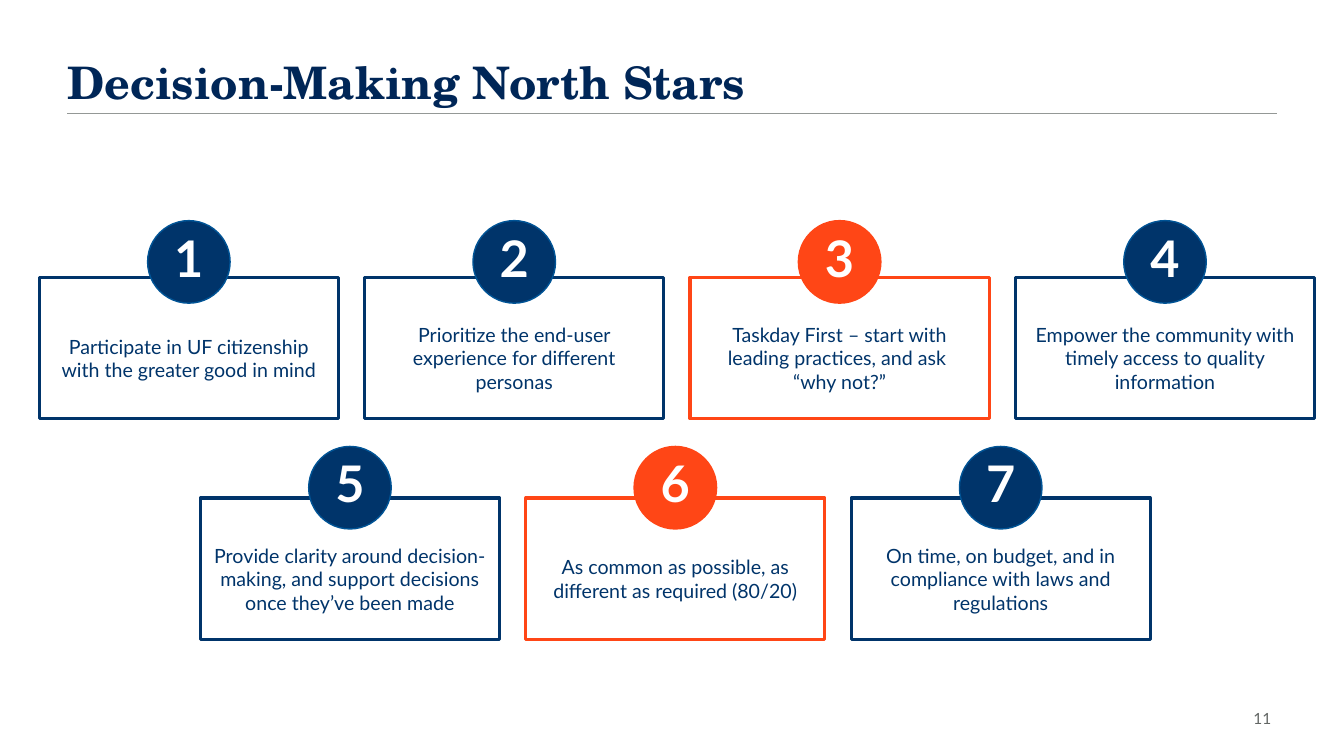
import copy

import pptx
import pptx.dml.color
import pptx.enum.shapes
import pptx.enum.text
import pptx.oxml
import pptx.oxml.ns
import pptx.util

Cm = pptx.util.Cm
Pt = pptx.util.Pt
SHAPE = pptx.enum.shapes.MSO_SHAPE
ALIGN = pptx.enum.text.PP_ALIGN
ANCHOR = pptx.enum.text.MSO_ANCHOR
qn = pptx.oxml.ns.qn

COLORS = {
    "navy": "00346A",
    "title": "002657",
    "edge": "005496",
    "orange": "FF4616",
    "rule": "949896",
    "number": "626664",
    "white": "FFFFFF",
}

BOX_W, BOX_H = 7.54, 3.56
BADGE = 2.08
PITCH = 8.2
ROWS = [
    (0.99, 6.99, 5.56, [
        "Participate in UF citizenship with the greater good in mind",
        "Prioritize the end-user experience for different personas",
        "Taskday First – start with leading practices, and ask \v“why not?”",
        "Empower the community with timely access to quality information",
    ]),
    (5.05, 12.55, 11.25, [
        "Provide clarity around decision-making, and support decisions once they’ve been made",
        "As common as possible, as different as required (80/20)",
        "On time, on budget, and in compliance with laws and regulations",
    ]),
]
HIGHLIGHTED = (3, 6)


def rgb(name):
    return pptx.dml.color.RGBColor.from_string(COLORS[name])


class Deck:
    title_font = {"name": "TeX Gyre Schola", "size": Pt(32), "bold": True}
    body_font = {"name": "Lato", "size": Pt(14), "bold": False}
    badge_font = {"name": "Lato", "size": Pt(36), "bold": True}
    number_font = {"name": "Lato", "size": Pt(11), "bold": False}

    def __init__(self):
        self.prs = pptx.Presentation()
        self.prs.slide_width = Cm(33.87)
        self.prs.slide_height = Cm(19.05)
        self.s = self.prs.slides.add_slide(self.prs.slide_layouts[6])

    def set_text(self, sp, text, font, color, align, anchor, insets, spacing=None):
        tf = sp.text_frame
        sides = ("margin_left", "margin_top", "margin_right", "margin_bottom")
        frame = dict(zip(sides, map(Cm, insets)), word_wrap=True, vertical_anchor=anchor)
        for key, value in frame.items():
            setattr(tf, key, value)
        p = tf.paragraphs[0]
        p.text = text
        p.alignment = align
        p.line_spacing = spacing
        for r in p.runs:
            for key, value in font.items():
                setattr(r.font, key, value)
            r.font.color.rgb = rgb(color)
        for br in p._p.findall(qn("a:br")):
            br.append(copy.deepcopy(p.runs[0]._r.find(qn("a:rPr"))))

    def text(self, x, y, w, h, text, font, color, align, anchor, insets, spacing=None):
        sp = self.s.shapes.add_textbox(Cm(x), Cm(y), Cm(w), Cm(h))
        self.set_text(sp, text, font, color, align, anchor, insets, spacing)

    def shape(self, kind, x, y, w, h, fill, line, width, text, font, color, insets):
        sp = self.s.shapes.add_shape(kind, Cm(x), Cm(y), Cm(w), Cm(h))
        sp.shadow.inherit = False
        if fill:
            sp.fill.solid()
            sp.fill.fore_color.rgb = rgb(fill)
        else:
            sp.fill.background()
        sp.line.color.rgb = rgb(line)
        sp.line.width = Pt(width)
        self.set_text(sp, text, font, color, ALIGN.CENTER, ANCHOR.MIDDLE, insets)

    def rule(self, x1, x2, y):
        line = self.s.shapes.add_connector(
            pptx.enum.shapes.MSO_CONNECTOR.STRAIGHT, Cm(x1), Cm(y), Cm(x2), Cm(y))
        line.line.color.rgb = rgb("rule")
        line.line.width = Pt(1)
        line._element.spPr.append(pptx.oxml.parse_xml(
            f"<a:effectLst {pptx.oxml.ns.nsdecls('a')}/>"))

    def card(self, number, x, y, badge_y, text):
        main = "orange" if number in HIGHLIGHTED else "navy"
        edge = "orange" if number in HIGHLIGHTED else "edge"
        self.shape(SHAPE.RECTANGLE, x, y, BOX_W, BOX_H, None, main, 2.25,
                   text, self.body_font, "navy", (0.25, 0.76, 0.25, 0.25))
        self.shape(SHAPE.OVAL, x + (BOX_W - BADGE) / 2, badge_y, BADGE, BADGE, main, edge, 1,
                   str(number), self.badge_font, "white", (0, 0, 0, 0.25))


def main():
    deck = Deck()
    deck.rule(1.7, 32.18, 2.86)
    deck.text(1.7, 1.52, 30.48, 1.24, "Decision-Making North Stars", deck.title_font,
              "title", ALIGN.LEFT, ANCHOR.MIDDLE, (0, 0.13, 0.25, 0.13), 0.9)
    number = 0
    for left, top, badge_top, texts in ROWS:
        for col, text in enumerate(texts):
            number += 1
            deck.card(number, left + col * PITCH, top, badge_top, text)
    deck.text(30.23, 17.75, 2.06, 0.74, "11", deck.number_font,
              "number", ALIGN.RIGHT, ANCHOR.TOP, (0.25, 0.13, 0.25, 0.13))
    deck.prs.save("out.pptx")


if __name__ == "__main__":
    main()
